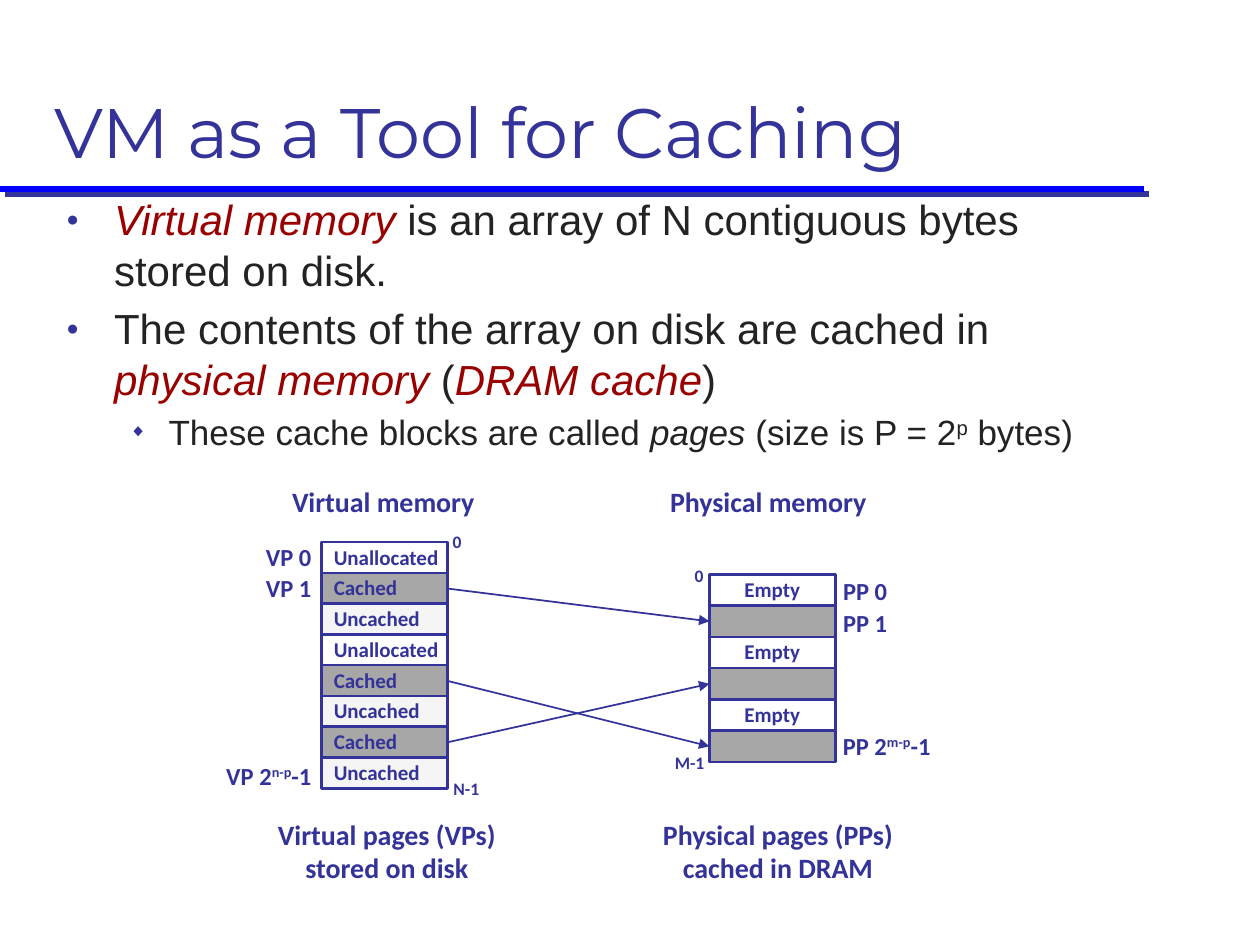
from dataclasses import dataclass

from lxml.etree import SubElement
from pptx import Presentation
from pptx.dml.color import RGBColor
from pptx.enum.shapes import MSO_CONNECTOR as Connector, MSO_SHAPE as Shape
from pptx.enum.text import MSO_ANCHOR as Anchor, PP_ALIGN as Align
from pptx.oxml.ns import qn
from pptx.util import Cm, Pt


@dataclass(frozen=True)
class Theme:
    navy: str = "333399"
    rule: str = "0000FF"
    ink: str = "232323"
    accent: str = "990000"
    white: str = "FFFFFF"
    grey: str = "A7A7A7"
    pale: str = "F5F5F5"
    title_font: str = "Montserrat"
    body_font: str = "Arial"
    label_font: str = "Calibri"
    title_size: int = 40
    body_sizes: tuple = (24, 20)
    caption_size: int = 16
    page_size: int = 14
    cell_size: int = 12
    address_size: int = 10


def apply(target, values):
    for name, value in values.items():
        setattr(target, name, value)


class SlideBuilder:
    def __init__(self, theme, page):
        self.theme = theme
        self.page = page

    def add_span(self, para, text, color, font, size, raised=False, **style):
        span = para.add_run()
        span.text = text
        apply(span.font, dict(name=font, size=Pt(size), **style))
        span.font.color.rgb = RGBColor.from_string(color)
        if raised:
            span.font._element.set("baseline", "30000")

    def title(self, text, left, top, width, height):
        box = self.page.shapes.title
        apply(box, dict(left=Cm(left), top=Cm(top), width=Cm(width), height=Cm(height)))
        apply(box.text_frame, dict(vertical_anchor=Anchor.BOTTOM, word_wrap=True))
        para = box.text_frame.paragraphs[0]
        para.alignment = Align.LEFT
        self.add_span(para, text, self.theme.navy, self.theme.title_font, self.theme.title_size)

    def bullets(self, items, left, top, width, height):
        frame = self.page.shapes.add_textbox(Cm(left), Cm(top), Cm(width), Cm(height)).text_frame
        frame.word_wrap = True
        for index, (level, spans) in enumerate(items):
            para = frame.paragraphs[0] if index == 0 else frame.add_paragraph()
            size = self.theme.body_sizes[level]
            apply(para, dict(level=level, space_before=Pt(size / 5)))
            margin, hanging, mark = ((0.96, 0.96, "●"), (2.06, 0.79, "◆"))[level]
            props = para._p.get_or_add_pPr()
            props.set("marL", str(Cm(margin)))
            props.set("indent", str(-Cm(hanging)))
            color = SubElement(props, qn("a:buClr"))
            SubElement(color, qn("a:srgbClr"), val=self.theme.navy)
            SubElement(props, qn("a:buSzPct"), val="50000")
            SubElement(props, qn("a:buFont"), typeface=self.theme.body_font)
            SubElement(props, qn("a:buChar"), char=mark)
            for text, style in spans:
                style = dict(color=self.theme.ink) | style
                self.add_span(para, text, font=self.theme.body_font, size=size, **style)

    def label(self, lines, left, top, width, height, size, align=Align.CENTER,
              anchor=Anchor.MIDDLE, spacing=0.98, before=0):
        box = self.page.shapes.add_textbox(Cm(left), Cm(top), Cm(width), Cm(height))
        apply(box.text_frame, dict(word_wrap=False, vertical_anchor=anchor))
        for index, parts in enumerate(lines):
            para = box.text_frame.paragraphs[0] if index == 0 else box.text_frame.add_paragraph()
            apply(para, dict(alignment=align, line_spacing=spacing, space_before=Pt(before)))
            for position, text in enumerate(parts):
                self.add_span(para, text, self.theme.navy, self.theme.label_font, size,
                              raised=position == 1, bold=True)

    def cell(self, text, fill, left, top, width, height, align):
        box = self.page.shapes.add_shape(Shape.RECTANGLE, Cm(left), Cm(top), Cm(width), Cm(height))
        box.shadow.inherit = False
        box.fill.solid()
        box.fill.fore_color.rgb = RGBColor.from_string(fill)
        box.line.color.rgb = RGBColor.from_string(self.theme.navy)
        box.line.width = Pt(1.5)
        if text:
            apply(box.text_frame, dict(word_wrap=False, vertical_anchor=Anchor.MIDDLE))
            para = box.text_frame.paragraphs[0]
            apply(para, dict(alignment=align, line_spacing=0.98))
            self.add_span(para, text, self.theme.navy, self.theme.label_font,
                          self.theme.cell_size, bold=True)
        return box

    def column(self, rows, left, top, step, align):
        return [self.cell(text, fill, left, top + index * step, 2.54, 0.63, align)
                for index, (text, fill) in enumerate(rows)]

    def line(self, start, end, color, width):
        points = [Cm(value) for value in (*start, *end)]
        connector = self.page.shapes.add_connector(Connector.STRAIGHT, *points)
        connector.line.color.rgb = RGBColor.from_string(color)
        connector.line.width = Pt(width)
        return connector, SubElement(connector._element.spPr, qn("a:effectLst"))

    def rule(self, start, end):
        effects = self.line(start, end, self.theme.rule, 3.5)[1]
        shadow = SubElement(effects, qn("a:outerShdw"), dist=str(Pt(4.2)), dir="2700000",
                            algn="ctr", rotWithShape="0")
        SubElement(shadow, qn("a:srgbClr"), val=self.theme.navy)

    def arrow(self, source, target):
        connector = self.line((0, 0), (1, 1), self.theme.navy, 1)[0]
        connector.begin_connect(source, 3)
        connector.end_connect(target, 1)
        SubElement(connector.line._get_or_add_ln(), qn("a:tailEnd"), type="triangle")


def main():
    theme = Theme()
    deck = Presentation()
    apply(deck, dict(slide_width=Cm(25.4), slide_height=Cm(19.05)))
    slide = SlideBuilder(theme, deck.slides.add_slide(deck.slide_layouts[5]))

    slide.rule((0, 3.81), (23.06, 3.81))
    slide.title("VM as a Tool for Caching", 0.84, 0.43, 23.7, 3.18)
    term = dict(color=theme.accent, italic=True)
    slide.bullets([
        (0, [("Virtual memory ", term),
             ("is an array of N contiguous bytes stored on disk.", {})]),
        (0, [("The contents of the array on disk are cached in ", {}),
             ("physical memory", term), (" (", {}), ("DRAM cache", term), (")", {})]),
        (1, [("These cache blocks are called ", {}), ("pages ", dict(italic=True)),
             ("(size is P = 2", {}), ("p", dict(raised=True)), (" bytes)", {})]),
    ], 1.09, 3.78, 21.95, 5.74)

    unallocated = ("Unallocated", theme.white)
    cached = ("Cached", theme.grey)
    uncached = ("Uncached", theme.pale)
    virtual = slide.column([unallocated, cached, uncached, unallocated,
                            cached, uncached, cached, uncached], 6.48, 10.93, 0.62, Align.LEFT)
    physical = slide.column([("Empty", theme.white), ("", theme.grey)] * 3,
                            14.3, 11.58, 0.63, Align.CENTER)
    for source, target in ((1, 1), (4, 5), (6, 3)):
        slide.arrow(virtual[source], physical[target])

    raised_line = dict(anchor=Anchor.TOP, spacing=0.88, before=6)
    for text, left, width in (("Virtual memory", 5.61, 4.24), ("Physical memory", 13.23, 4.52)):
        slide.label([[text]], left, 9.73, width, 0.86, theme.caption_size, **raised_line)
    for lines, left, width in (
            ([["Virtual pages (VPs)"], ["stored on disk"]], 5.31, 4.98),
            ([["Physical pages (PPs)"], ["cached in DRAM"]], 13.08, 5.21)):
        slide.label(lines, left, 16.38, width, 1.6, theme.caption_size)

    for parts, left, top in ((["VP 0"], 5.11, 10.87), (["VP 1"], 5.11, 11.51),
                             (["VP 2", "n-p", "-1"], 4.24, 15.29)):
        slide.label([parts], left, top, 6.53 - left, 0.79, theme.page_size,
                    align=Align.RIGHT, **raised_line)
    for text, top in (("PP 0", 11.51), ("PP 1", 12.14)):
        slide.label([[text]], 16.74, top, 1.4, 0.86, theme.page_size)
    slide.label([["PP 2", "m-p", "-1"]], 16.74, 14.68, 2.36, 0.79, theme.page_size,
                align=Align.LEFT, **raised_line)
    for text, left, top, width in (("0", 8.86, 10.59, 0.71), ("N-1", 8.89, 15.57, 1.02),
                                   ("0", 13.74, 11.28, 0.71), ("M-1", 13.34, 15.04, 1.12)):
        slide.label([[text]], left, top, width, 0.69, theme.address_size)

    deck.save("out.pptx")


if __name__ == "__main__":
    main()
